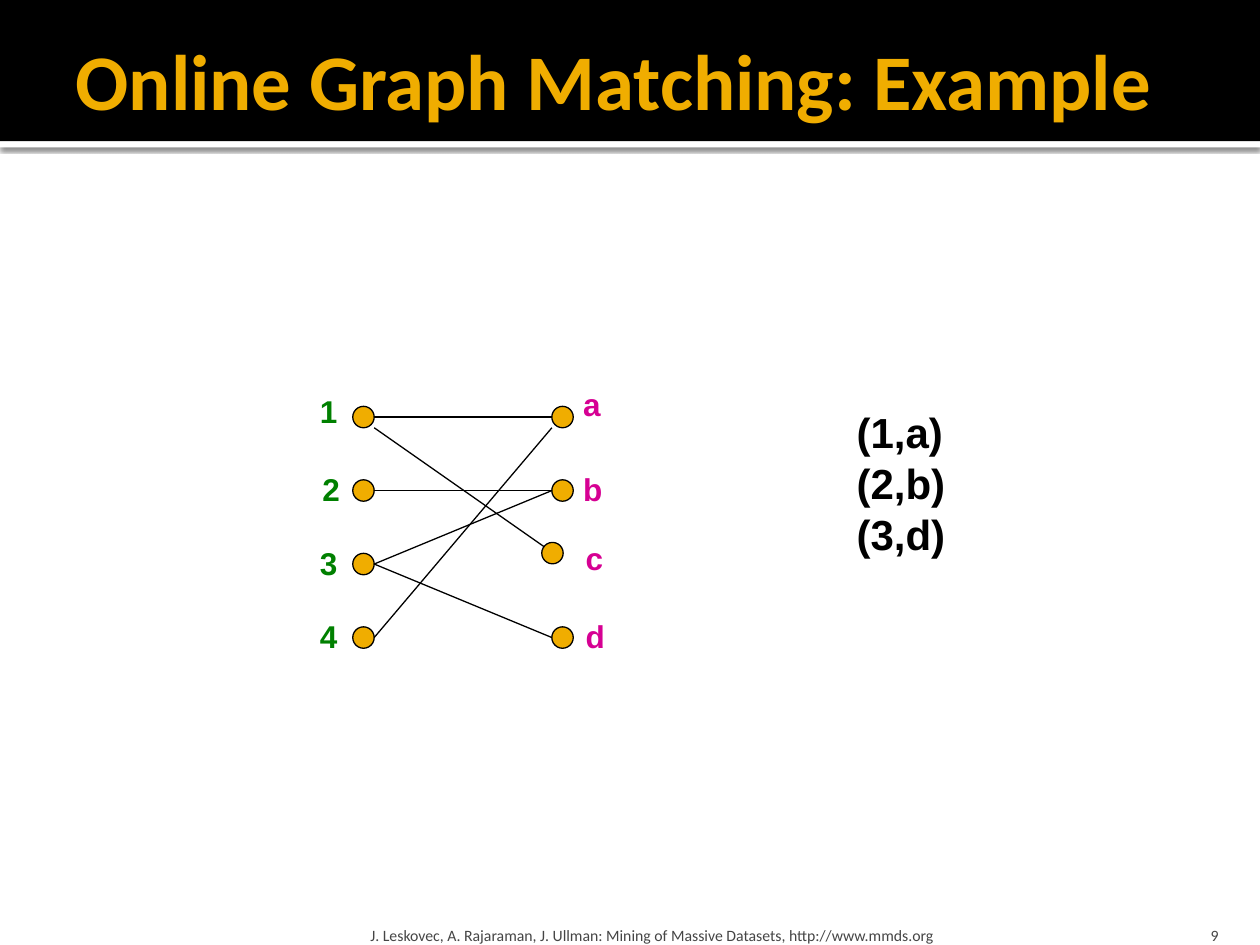
from lxml.etree import SubElement
from pptx import Presentation
from pptx.dml.color import RGBColor
from pptx.enum.shapes import MSO_CONNECTOR as Connector, MSO_SHAPE as Shape
from pptx.enum.text import MSO_ANCHOR as Anchor, MSO_AUTO_SIZE as AutoSize, PP_ALIGN as Align
from pptx.oxml.ns import qn
from pptx.util import Inches, Pt

GOLD, BLACK, WHITE, GRAY = "F0AD00", "000000", "FFFFFF", "454545"
GREEN, PINK = "008000", "D60093"

# Grid of the graph, in inches
TOP_ROW, ROW_STEP = 3.31, 1.75 / 3
NODE = 0.17
LEFT_X, RIGHT_X = 2.8, 4.38
EDGE_START = LEFT_X + NODE
LABEL_HEIGHT = 0.4


def color(hex_string):
    return RGBColor.from_string(hex_string)


def row_y(row):
    """Centre line of a graph row."""
    return TOP_ROW + row * ROW_STEP


def style_text(shape, text, size, font, fill, bold=False, align=Align.LEFT):
    frame = shape.text_frame
    frame.text = text
    para = frame.paragraphs[0]
    para.alignment = align
    style = para.runs[0].font
    style.size, style.name, style.bold = Pt(size), font, bold
    style.color.rgb = color(fill)
    return frame


def set_insets(frame, left, top, right, bottom):
    frame.margin_left, frame.margin_top = Inches(left), Inches(top)
    frame.margin_right, frame.margin_bottom = Inches(right), Inches(bottom)


def add_filled(page, kind, left, top, width, height, fill):
    shape = page.shapes.add_shape(
        kind, Inches(left), Inches(top), Inches(width), Inches(height))
    shape.shadow.inherit = False
    shape.fill.solid()
    shape.fill.fore_color.rgb = color(fill)
    shape.line.fill.background()
    return shape


def add_drop_shadow(shape):
    effects = shape.element.spPr.find(qn("a:effectLst"))
    shadow = SubElement(effects, qn("a:outerShdw"), blurRad=str(Pt(2.5)),
                        dist=str(Pt(0.8)), dir="5400000", rotWithShape="0")
    tint = SubElement(shadow, qn("a:srgbClr"), val=BLACK)
    SubElement(tint, qn("a:alpha"), val="60000")


def add_header(page, text):
    add_drop_shadow(add_filled(page, Shape.RECTANGLE, 0, 1.12, 10, 0.05, WHITE))
    add_filled(page, Shape.RECTANGLE, 0, 0, 10, 1.12, BLACK)
    title = page.shapes.title
    title.left, title.top = Inches(0.5), Inches(0.17)
    title.width, title.height = Inches(9.5), Inches(0.92)
    frame = style_text(title, text, 45, "Calibri", GOLD, bold=True)
    frame.auto_size, frame.vertical_anchor = AutoSize.NONE, Anchor.MIDDLE
    set_insets(frame, 0.1, 0.05, 0.05, 0.05)
    # The title lies over the black band
    title.element.getparent().append(title.element)


def add_footer(page, text, left, width, side_inset, align=Align.LEFT):
    box = page.shapes.add_textbox(
        Inches(left), Inches(7.2), Inches(width), Inches(0.3))
    frame = style_text(box, text, 9, "Calibri", GRAY, align=align)
    frame.word_wrap, frame.vertical_anchor = True, Anchor.BOTTOM
    set_insets(frame, side_inset, 0.05, side_inset, 0)


def add_label(page, text, left, top, width, height, size, fill):
    box = page.shapes.add_textbox(
        Inches(left), Inches(top), Inches(width), Inches(height))
    frame = style_text(box, text, size, "Arial", fill, bold=True)
    frame.word_wrap, frame.auto_size = False, AutoSize.SHAPE_TO_FIT_TEXT


def add_node(page, left, center_y):
    node = add_filled(page, Shape.OVAL, left, center_y - NODE / 2, NODE, NODE, GOLD)
    node.line.color.rgb = color(BLACK)
    node.line.width = Pt(0.75)


def add_edge(page, start_y, end_x, end_y):
    edge = page.shapes.add_connector(
        Connector.STRAIGHT, Inches(EDGE_START), Inches(start_y),
        Inches(end_x), Inches(end_y))
    edge.line.color.rgb = color(BLACK)
    edge.line.width = Pt(0.75)
    SubElement(edge.element.spPr, qn("a:effectLst"))


def add_graph(page):
    # Numbered nodes: label, label left, label shift from the row
    for row, (text, left, shift) in enumerate(
            [("1", 2.44, -0.05), ("2", 2.46, -0.01),
             ("3", 2.44, -0.01), ("4", 2.44, -0.01)]):
        add_node(page, LEFT_X, row_y(row))
        top = row_y(row) - LABEL_HEIGHT / 2 + shift
        add_label(page, text, left, top, 0.34, LABEL_HEIGHT, 18, GREEN)

    # Lettered nodes: label, node left, node centre, label left, label top
    for text, node_x, center_y, left, top in [
            ("a", RIGHT_X, row_y(0), 4.53, 3.01),
            ("b", RIGHT_X, row_y(1), 4.53, 3.68),
            ("c", 4.3, 4.39, 4.55, 4.23),
            ("d", RIGHT_X, row_y(3), 4.55, 4.85)]:
        add_node(page, node_x, center_y)
        add_label(page, text, left, top, 0.36, LABEL_HEIGHT, 18, PINK)

    # Edges; two of them meet the lower rim of a top node
    rim = row_y(0) + NODE / 2
    for start_y, end_x, end_y in [
            (row_y(0), RIGHT_X, row_y(0)),
            (row_y(3), RIGHT_X, rim),
            (row_y(1), RIGHT_X, row_y(1)),
            (row_y(2), RIGHT_X, row_y(1)),
            (rim, 4.32, 4.34),
            (row_y(2), RIGHT_X, row_y(3))]:
        add_edge(page, start_y, end_x, end_y)


def main():
    deck = Presentation()
    deck.slide_width, deck.slide_height = Inches(10), Inches(7.5)
    page = deck.slides.add_slide(deck.slide_layouts[5])

    add_header(page, "Online Graph Matching: Example")
    add_footer(page, "J. Leskovec, A. Rajaraman, J. Ullman: "
               "Mining of Massive Datasets, http://www.mmds.org", 2.89, 6.02, 0.05)
    add_footer(page, "9", 8.97, 0.8, 0.1, Align.RIGHT)
    add_graph(page)

    # Matched pairs, in boxes with room to spare on the right
    for text, top in [("(1,a)", 3.18), ("(2,b)", 3.58), ("(3,d)", 3.99)]:
        add_label(page, text, 6.7, top, 0.95, 0.5, 24, BLACK)

    deck.save("out.pptx")


if __name__ == "__main__":
    main()
